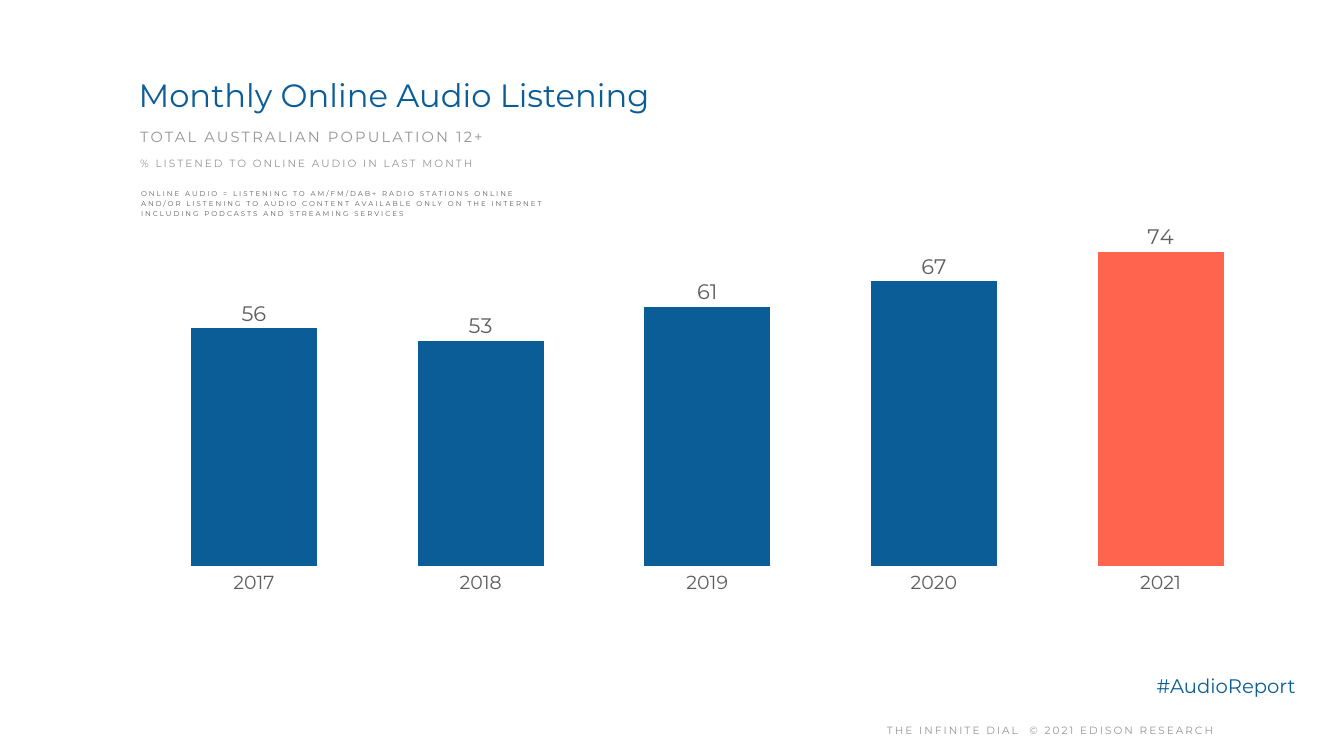
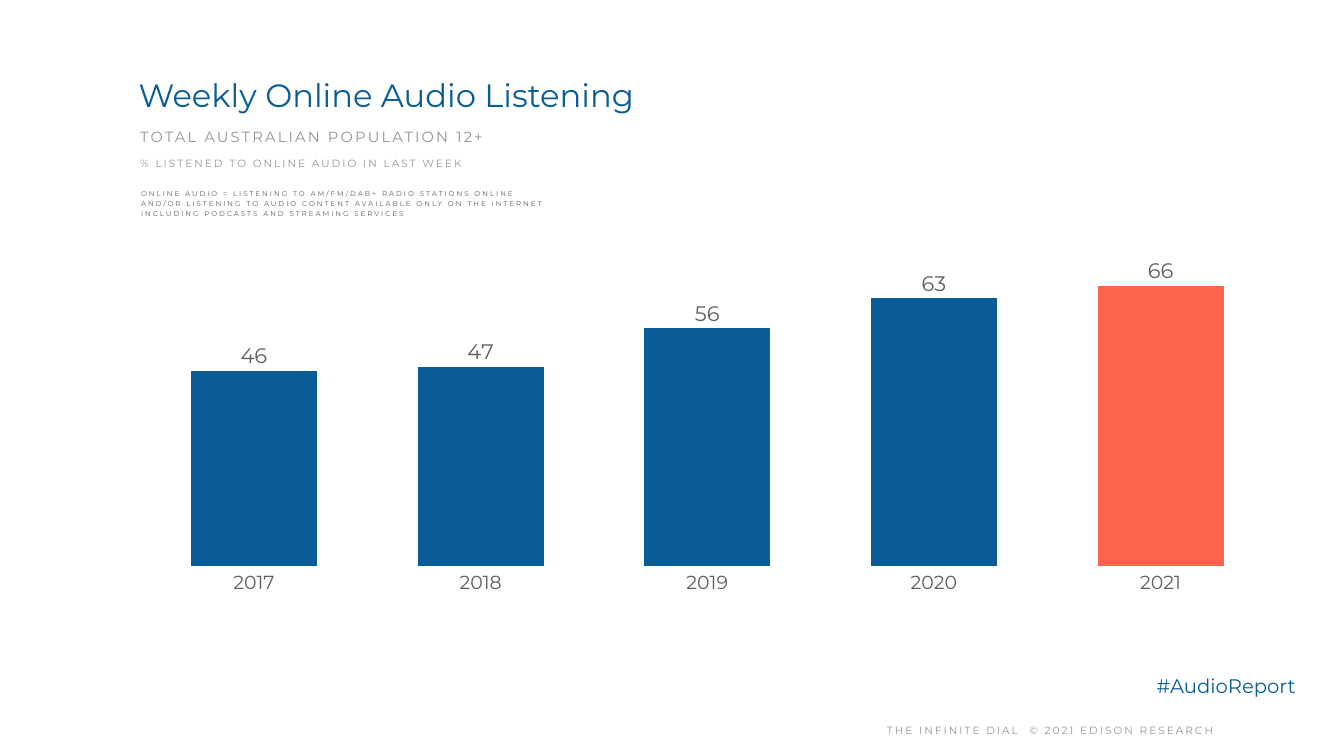
from lxml import etree
from pptx import Presentation
from pptx import util as u
from pptx.chart import data as chart_data
from pptx.dml.color import RGBColor
from pptx.enum import chart as chart_enum
from pptx.enum import text
from pptx.oxml import parse_xml
from pptx.oxml.ns import nsdecls, qn

COLORS = {"blue": "0A5D96", "coral": "FF644E", "gray": "959595", "dark": "5E5E5E"}
FONT = "Montserrat"
INSET = (0.08, 0.08, 0.08, 0.08)
TOP, MIDDLE = text.MSO_ANCHOR.TOP, text.MSO_ANCHOR.MIDDLE

YEARS = ["2017", "2018", "2019", "2020", "2021"]
POPULATION = "TOTAL AUSTRALIAN POPULATION 12+"
DEFINITION = (
    "ONLINE AUDIO = LISTENING TO AM/FM/DAB+ RADIO STATIONS ONLINE "
    "AND/OR LISTENING TO AUDIO CONTENT AVAILABLE ONLY ON THE INTERNET "
    "INCLUDING PODCASTS AND STREAMING SERVICES"
)
COPYRIGHT = "THE INFINITE DIAL  © 2021 EDISON RESEARCH"
HASHTAG = "#AudioReport"


def rgb(name):
    return RGBColor.from_string(COLORS[name])


def set_font(font, size, color):
    font.name = FONT
    font.size = u.Pt(size)
    font.bold = False
    font.color.rgb = rgb(color)


def place(shape, box):
    shape.left, shape.top, shape.width, shape.height = map(u.Inches, box)


def write(shape, wording, size, color, tracking=0, line_spacing=None,
          anchor=MIDDLE, align=text.PP_ALIGN.LEFT, inset=INSET):
    """Fill a shape with one formatted paragraph."""
    frame = shape.text_frame
    frame.word_wrap = True
    frame.auto_size = text.MSO_AUTO_SIZE.NONE
    frame.vertical_anchor = anchor
    (frame.margin_left, frame.margin_top,
     frame.margin_right, frame.margin_bottom) = map(u.Inches, inset)
    paragraph = frame.paragraphs[0]
    paragraph.alignment = align
    if line_spacing:
        paragraph.line_spacing = line_spacing
    run = paragraph.add_run()
    run.text = wording
    set_font(run.font, size, color)
    if tracking:
        run._r.get_or_add_rPr().set("spc", str(round(tracking * 100)))


def add_text(slide, box, wording, size, color, **formatting):
    shape = slide.shapes.add_textbox(*map(u.Inches, box))
    write(shape, wording, size, color, **formatting)


def add_footer(slide, box):
    """Hashtag and copyright line in the lower right corner."""
    left, top, width, height = box
    add_text(slide, (left, top + height - 0.53, width, 0.53), COPYRIGHT, 15, "gray",
             tracking=2.9, line_spacing=1.2, align=text.PP_ALIGN.CENTER)
    add_text(slide, (left + 7.92, top, 3.29, 0.68), HASHTAG, 28, "blue",
             line_spacing=1.1, anchor=TOP)


def add_heading(slide, box, title, measure):
    """Title, population, measure and definition, stacked."""
    left, top, width, _ = box
    place(slide.shapes.title, (left, top, width, 1.23))
    write(slide.shapes.title, title, 46, "blue", anchor=TOP)
    add_text(slide, (left + 0.03, top + 0.97, 22.55, 0.58), POPULATION, 21, "gray",
             tracking=3.1, line_spacing=1.2)
    add_text(slide, (left + 0.03, top + 1.57, 7.22, 0.46), measure, 15, "gray",
             tracking=2.9, line_spacing=1.2)
    add_text(slide, (left + 0.11, top + 2.3, 8.27, 0.64), DEFINITION, 10, "dark",
             tracking=2.9, line_spacing=1.2, anchor=TOP, inset=(0.02, 0.02, 0.04, 0.02))


def fix_plot_area(chart, width, height):
    """Fix the inner plot area and make the chart background transparent."""
    chart_element = chart._chartSpace.find(qn("c:chart"))
    plot_area = chart_element.find(qn("c:plotArea"))
    for old_layout in plot_area.findall(qn("c:layout")):
        plot_area.remove(old_layout)
    layout = etree.Element(qn("c:layout"))
    manual = etree.SubElement(layout, qn("c:manualLayout"))
    settings = {"layoutTarget": "inner", "xMode": "edge", "yMode": "edge",
                "x": 0.32 / width, "y": 1.3 / height,
                "w": 22.49 / width, "h": 8.44 / height}
    for tag, value in settings.items():
        etree.SubElement(manual, qn("c:" + tag)).set("val", str(value))
    plot_area.insert(0, layout)
    chart_element.addnext(parse_xml(
        f'<c:spPr {nsdecls("c", "a")}><a:noFill/><a:ln><a:noFill/></a:ln></c:spPr>'))


def add_column_chart(slide, box, values):
    """Yearly columns with the latest year highlighted."""
    data = chart_data.CategoryChartData(number_format="#,##0")
    data.categories = YEARS
    data.add_series("Series 1", values)
    chart = slide.shapes.add_chart(
        chart_enum.XL_CHART_TYPE.COLUMN_CLUSTERED, *map(u.Inches, box), data).chart
    chart.has_legend = False
    chart.has_title = False
    set_font(chart.font, 10, "gray")
    fix_plot_area(chart, *box[2:])

    # Axes
    years = chart.category_axis
    years.major_tick_mark = chart_enum.XL_TICK_MARK.OUTSIDE
    years.format.line.fill.background()
    set_font(years.tick_labels.font, 27, "dark")
    scale = chart.value_axis
    scale.minimum_scale, scale.maximum_scale, scale.major_unit = 0, 100, 20
    scale.has_major_gridlines = False
    scale.visible = False

    # Columns
    plot = chart.plots[0]
    plot.gap_width, plot.overlap = 80, -10
    plot.vary_by_categories = False
    series = plot.series[0]
    latest = series.points[len(values) - 1]
    for part, color in ((series, "blue"), (latest, "coral")):
        part.format.fill.solid()
        part.format.fill.fore_color.rgb = rgb(color)

    # Value labels
    labels = series.data_labels
    labels.show_value = True
    labels.position = chart_enum.XL_LABEL_POSITION.OUTSIDE_END
    labels.number_format = "#,##0"
    labels.number_format_is_linked = False
    set_font(labels.font, 30, "dark")


def add_trend_slide(presentation, title, measure, values):
    slide = presentation.slides.add_slide(presentation.slide_layouts[5])
    add_footer(slide, (14.95, 13.25, 11.78, 1.49))
    add_column_chart(slide, (2.47, 1.5, 22.92, 10.61), values)
    add_heading(slide, (2.67, 1.41, 21.69, 2.94), title, measure)


def main():
    presentation = Presentation()
    presentation.slide_width = u.Inches(26.67)
    presentation.slide_height = u.Inches(15)
    add_trend_slide(presentation, "Monthly Online Audio Listening",
                    "% LISTENED TO ONLINE AUDIO IN LAST MONTH", (56, 53, 61, 67, 74))
    add_trend_slide(presentation, "Weekly Online Audio Listening",
                    "% LISTENED TO ONLINE AUDIO IN LAST WEEK", (46, 47, 56, 63, 66))
    presentation.save("out.pptx")


if __name__ == "__main__":
    main()
